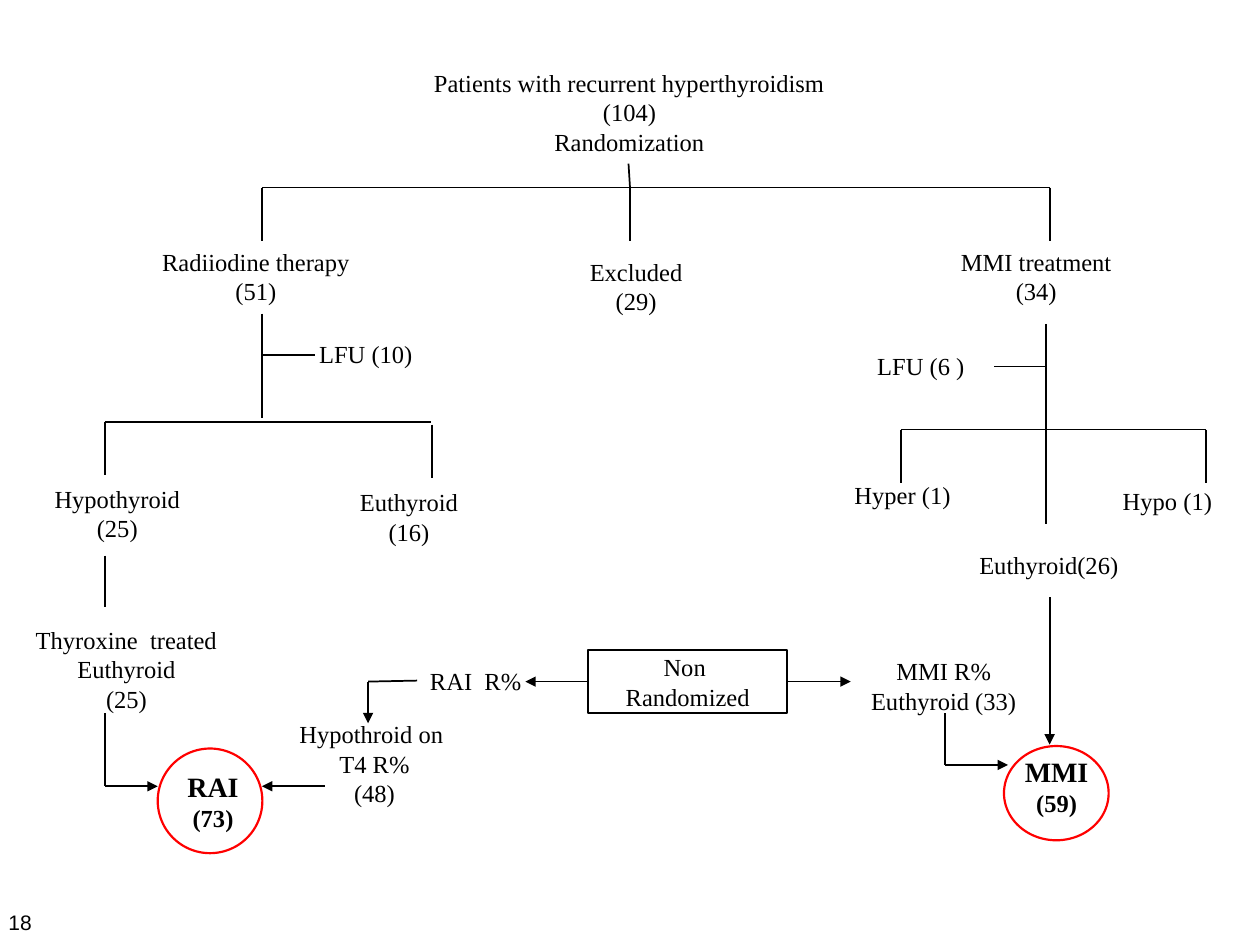
from lxml.etree import SubElement
from pptx import Presentation
from pptx.dml.color import RGBColor
from pptx.enum.shapes import MSO_CONNECTOR, MSO_SHAPE
from pptx.enum.text import MSO_ANCHOR, MSO_AUTO_SIZE, PP_ALIGN
from pptx.oxml.ns import qn
from pptx.util import Cm, Pt

COLORS = {"ink": "000000", "outcome": "FF0000"}
SERIF = "Times New Roman"
LABEL = {"name": SERIF, "size": Pt(14)}
OUTCOME_NAME = {"name": SERIF, "size": Pt(16), "bold": True}
OUTCOME_COUNT = {"name": SERIF, "size": Pt(14), "bold": True}
PAGE_NUMBER = {"name": "Arial", "size": Pt(12)}

ROOT_X, RAI_X, MMI_X = 12.7, 5.28, 21.16
HYPOTHYROID_X, EUTHYROID_X = 2.11, 8.71
MMI_STEM_X, HYPER_X, HYPO_X = 21.08, 18.16, 24.31
MMI_REPEAT_X, RAI_REPEAT_X = 19.05, 7.42
ARMS_Y, ARMS_END_Y = 3.78, 4.85
RAI_SPLIT_Y, MMI_SPLIT_Y = 8.51, 8.66
REPEAT_Y, RAI_END_Y, MMI_END_Y = 13.74, 15.85, 15.42

STAGES = [
    (8.46, 1.24, 8.46, ["Patients with recurrent hyperthyroidism", "(104)", "Randomization"]),
    (3.0, 4.85, 4.32, ["Radiiodine therapy", "(51)"]),
    (6.17, 6.71, 2.41, ["LFU (10)"]),
    (0.84, 9.63, 3.05, ["Hypothyroid", "(25)"]),
    (6.99, 9.7, 2.51, ["Euthyroid", "(16)"]),
    (0.38, 12.47, 4.34, ["Thyroxine  treated", "Euthyroid", "(25)"]),
    (11.63, 5.05, 2.39, ["Excluded", "(29)"]),
    (19.1, 4.85, 3.58, ["MMI treatment", "(34)"]),
    (17.42, 6.96, 2.29, ["LFU (6 )"]),
    (16.71, 9.55, 2.97, ["Hyper (1)"]),
    (22.38, 9.68, 2.31, ["Hypo (1)"]),
    (19.48, 10.97, 3.33, ["Euthyroid(26)"]),
    (17.3, 13.11, 3.45, ["MMI R%", "Euthyroid (33)"]),
    (5.77, 14.38, 3.56, ["Hypothroid on ", "T4 R%", "(48)"]),
    (8.41, 13.31, 2.36, ["RAI  R%"]),
]

BRANCHES = [
    (12.67, 3.3, ROOT_X, ARMS_Y),
    (RAI_X, ARMS_Y, MMI_X, ARMS_Y),
    *((x, ARMS_Y, x, ARMS_END_Y) for x in (RAI_X, ROOT_X, MMI_X)),
    (RAI_X, 6.32, RAI_X, 8.43),
    (RAI_X, 7.16, 6.35, 7.16),
    (HYPOTHYROID_X, RAI_SPLIT_Y, 8.69, RAI_SPLIT_Y),
    (HYPOTHYROID_X, RAI_SPLIT_Y, HYPOTHYROID_X, 9.58),
    (EUTHYROID_X, 8.56, EUTHYROID_X, 9.63),
    (HYPOTHYROID_X, 11.2, HYPOTHYROID_X, 12.24),
    (HYPOTHYROID_X, 14.38, HYPOTHYROID_X, RAI_END_Y),
    (MMI_STEM_X, 6.53, MMI_STEM_X, MMI_SPLIT_Y),
    (20.04, 7.39, MMI_STEM_X, 7.39),
    (HYPER_X, MMI_SPLIT_Y, HYPO_X, MMI_SPLIT_Y),
    *((x, MMI_SPLIT_Y, x, 9.73) for x in (HYPER_X, HYPO_X)),
    (MMI_STEM_X, MMI_SPLIT_Y, MMI_STEM_X, 10.57),
    (MMI_REPEAT_X, 14.38, MMI_REPEAT_X, MMI_END_Y),
    (8.41, 13.72, RAI_REPEAT_X, REPEAT_Y),
]

ARROWS = [
    (HYPOTHYROID_X, RAI_END_Y, 3.18, RAI_END_Y, "tailEnd"),
    (MMI_X, 12.04, MMI_X, 15.01, "tailEnd"),
    (RAI_X, RAI_END_Y, 6.55, RAI_END_Y, "headEnd"),
    (15.88, REPEAT_Y, 17.15, REPEAT_Y, "tailEnd"),
    (10.59, REPEAT_Y, 11.86, REPEAT_Y, "headEnd"),
    (RAI_REPEAT_X, REPEAT_Y, RAI_REPEAT_X, 14.58, "tailEnd"),
    (MMI_REPEAT_X, MMI_END_Y, 20.32, MMI_END_Y, "tailEnd"),
]


def rgb(color):
    return RGBColor.from_string(COLORS[color])


def write_lines(frame, lines, align=PP_ALIGN.CENTER):
    for index, (words, font_format) in enumerate(lines):
        paragraph = frame.add_paragraph() if index else frame.paragraphs[0]
        paragraph.alignment = align
        run = paragraph.add_run()
        run.text = words
        for attribute, value in font_format.items():
            setattr(run.font, attribute, value)
        run.font.color.rgb = rgb("ink")


def add_label(slide, left, top, width, height, lines, align=PP_ALIGN.CENTER):
    label = slide.shapes.add_textbox(Cm(left), Cm(top), Cm(width), Cm(height))
    label.text_frame.word_wrap = False
    label.text_frame.auto_size = MSO_AUTO_SIZE.SHAPE_TO_FIT_TEXT
    write_lines(label.text_frame, lines, align)


def add_outline(slide, preset, left, top, width, height, color, weight):
    outline = slide.shapes.add_shape(preset, Cm(left), Cm(top), Cm(width), Cm(height))
    outline.shadow.inherit = False
    outline.fill.background()
    outline.line.color.rgb = rgb(color)
    outline.line.width = Pt(weight)
    return outline


def add_line(slide, x1, y1, x2, y2, arrow_end=None):
    line = slide.shapes.add_connector(MSO_CONNECTOR.STRAIGHT, Cm(x1), Cm(y1), Cm(x2), Cm(y2))
    line.line.color.rgb = rgb("ink")
    line.line.width = Pt(1)
    if arrow_end:
        SubElement(line.line._get_or_add_ln(), qn(f"a:{arrow_end}"), type="triangle")
    SubElement(line._element.spPr, qn("a:effectLst"))


def add_outcome(slide, name, count, label_box, circle_box):
    add_label(slide, *label_box, [(name, OUTCOME_NAME), (count, OUTCOME_COUNT)])
    add_outline(slide, MSO_SHAPE.OVAL, *circle_box, "outcome", 1.25)


def add_non_randomized(slide):
    source = add_outline(slide, MSO_SHAPE.RECTANGLE, 11.86, 13.11, 4.01, 1.27, "ink", 1)
    source.text_frame.word_wrap = False
    source.text_frame.vertical_anchor = MSO_ANCHOR.MIDDLE
    write_lines(source.text_frame, [("Non ", LABEL), ("Randomized", LABEL)])


def main():
    deck = Presentation()
    deck.slide_width, deck.slide_height = Cm(25.4), Cm(19.05)
    slide = deck.slides.add_slide(deck.slide_layouts[6])
    add_label(slide, -5.03, 18.21, 5.92, 1.32, [("18", PAGE_NUMBER)], PP_ALIGN.RIGHT)
    for left, top, width, lines in STAGES:
        height = 0.26 + 0.6 * len(lines)
        add_label(slide, left, top, width, height, [(words, LABEL) for words in lines])
    for connection in BRANCHES + ARROWS:
        add_line(slide, *connection)
    add_non_randomized(slide)
    add_outcome(slide, "RAI", "(73)", (3.51, 15.39, 1.57, 1.55), (3.18, 15.09, 2.11, 2.11))
    add_outcome(slide, "MMI", "(59)", (20.4, 15.09, 1.8, 1.55), (20.24, 15.04, 2.11, 1.9))
    deck.save("out.pptx")


if __name__ == "__main__":
    main()
